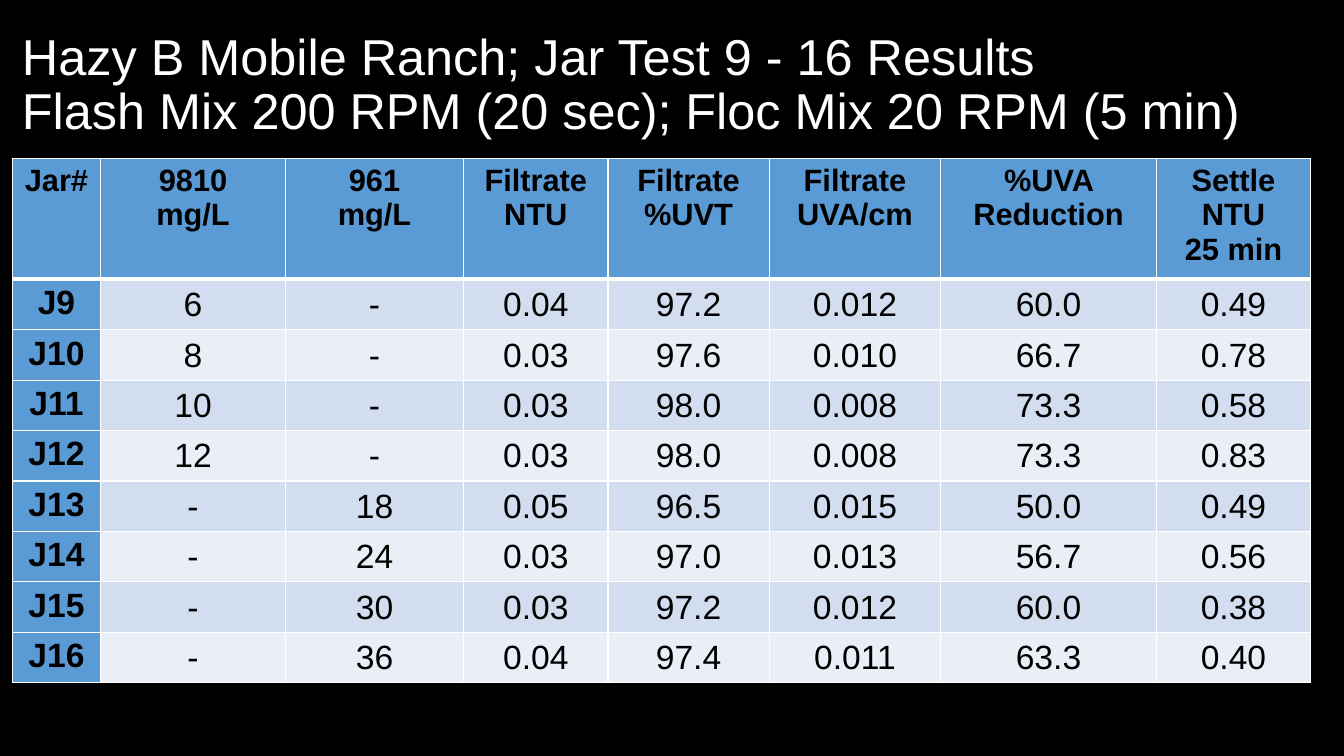
from lxml.etree import SubElement
from pptx import Presentation
from pptx.dml.color import RGBColor
from pptx.enum.text import MSO_ANCHOR, PP_ALIGN
from pptx.oxml.ns import qn
from pptx.util import Inches, Pt

BLACK = RGBColor(0x00, 0x00, 0x00)
WHITE = RGBColor(0xFF, 0xFF, 0xFF)
HEADER_BLUE = RGBColor(0x5B, 0x9B, 0xD5)
BANDS = (RGBColor(0xD2, 0xDE, 0xEF), RGBColor(0xEA, 0xEF, 0xF7))

TITLE = ("Hazy B Mobile Ranch; Jar Test 9 - 16 Results\v"
         "Flash Mix 200 RPM (20 sec); Floc Mix 20 RPM (5 min)")
HEADINGS = ["Jar#", "9810\nmg/L", "961\nmg/L", "Filtrate\nNTU", "Filtrate\n%UVT",
            "Filtrate\nUVA/cm", "%UVA Reduction", "Settle\nNTU\n25 min"]
JAR_RESULTS = [
    ["J9", "6", "-", "0.04", "97.2", "0.012", "60.0", "0.49"],
    ["J10", "8", "-", "0.03", "97.6", "0.010", "66.7", "0.78"],
    ["J11", "10", "-", "0.03", "98.0", "0.008", "73.3", "0.58"],
    ["J12", "12", "-", "0.03", "98.0", "0.008", "73.3", "0.83"],
    ["J13", "-", "18", "0.05", "96.5", "0.015", "50.0", "0.49"],
    ["J14", "-", "24", "0.03", "97.0", "0.013", "56.7", "0.56"],
    ["J15", "-", "30", "0.03", "97.2", "0.012", "60.0", "0.38"],
    ["J16", "-", "36", "0.04", "97.4", "0.011", "63.3", "0.40"],
]
COLUMN_WIDTHS = [0.88, 1.83, 1.77, 1.43, 1.6, 1.7, 2.14, 1.53]
ROW_HEIGHT = 0.41
LEFT = 0.12
TABLE_TOP = 1.57


def write_text(frame, text, size, color, bold=False, align=PP_ALIGN.LEFT, spacing=None):
    frame.text = text
    for paragraph in frame.paragraphs:
        paragraph.alignment = align
        paragraph.line_spacing = spacing
        for run in paragraph.runs:
            run.font.name = "Arial"
            run.font.size = Pt(size)
            run.font.bold = bold
            run.font.color.rgb = color


def add_borders(cell, top=1, bottom=1):
    """Draw white lines on all four sides; widths are in points."""
    properties = cell._tc.get_or_add_tcPr()
    for side, width in (("L", 1), ("R", 1), ("T", top), ("B", bottom)):
        line = SubElement(properties, qn(f"a:ln{side}"), w=str(Pt(width)))
        fill = SubElement(line, qn("a:solidFill"))
        SubElement(fill, qn("a:srgbClr"), val=str(WHITE))


def fill_cell(cell, text, row, column):
    is_heading = row == 0
    is_label = is_heading or column == 0
    add_borders(cell, top=3 if row == 1 else 1, bottom=3 if is_heading else 1)
    cell.fill.solid()
    cell.fill.fore_color.rgb = HEADER_BLUE if is_label else BANDS[(row - 1) % 2]
    if not is_label:
        cell.vertical_anchor = MSO_ANCHOR.MIDDLE
        cell.margin_left = cell.margin_top = cell.margin_right = Inches(0.01)
        cell.margin_bottom = 0
    write_text(cell.text_frame, text, size=22 if is_heading else 24, color=BLACK,
               bold=is_label, align=PP_ALIGN.CENTER)


def add_title(slide):
    box = slide.shapes.add_textbox(Inches(LEFT), Inches(0.13), Inches(13.03), Inches(1.45))
    frame = box.text_frame
    frame.word_wrap = True
    frame.vertical_anchor = MSO_ANCHOR.MIDDLE
    write_text(frame, TITLE, size=36, color=WHITE, spacing=0.9)


def add_results_table(slide):
    rows = [HEADINGS] + JAR_RESULTS
    table = slide.shapes.add_table(
        len(rows), len(HEADINGS), Inches(LEFT), Inches(TABLE_TOP),
        Inches(sum(COLUMN_WIDTHS)), Inches(ROW_HEIGHT * len(rows))).table
    table.first_col = True
    for column, width in zip(table.columns, COLUMN_WIDTHS):
        column.width = Inches(width)
    for row, values in enumerate(rows):
        for column, value in enumerate(values):
            fill_cell(table.cell(row, column), value, row, column)


def main():
    deck = Presentation()
    deck.slide_width, deck.slide_height = Inches(13.33), Inches(7.5)
    slide = deck.slides.add_slide(deck.slide_layouts[6])
    slide.background.fill.solid()
    slide.background.fill.fore_color.rgb = BLACK
    add_title(slide)
    add_results_table(slide)
    deck.save("out.pptx")


if __name__ == "__main__":
    main()
